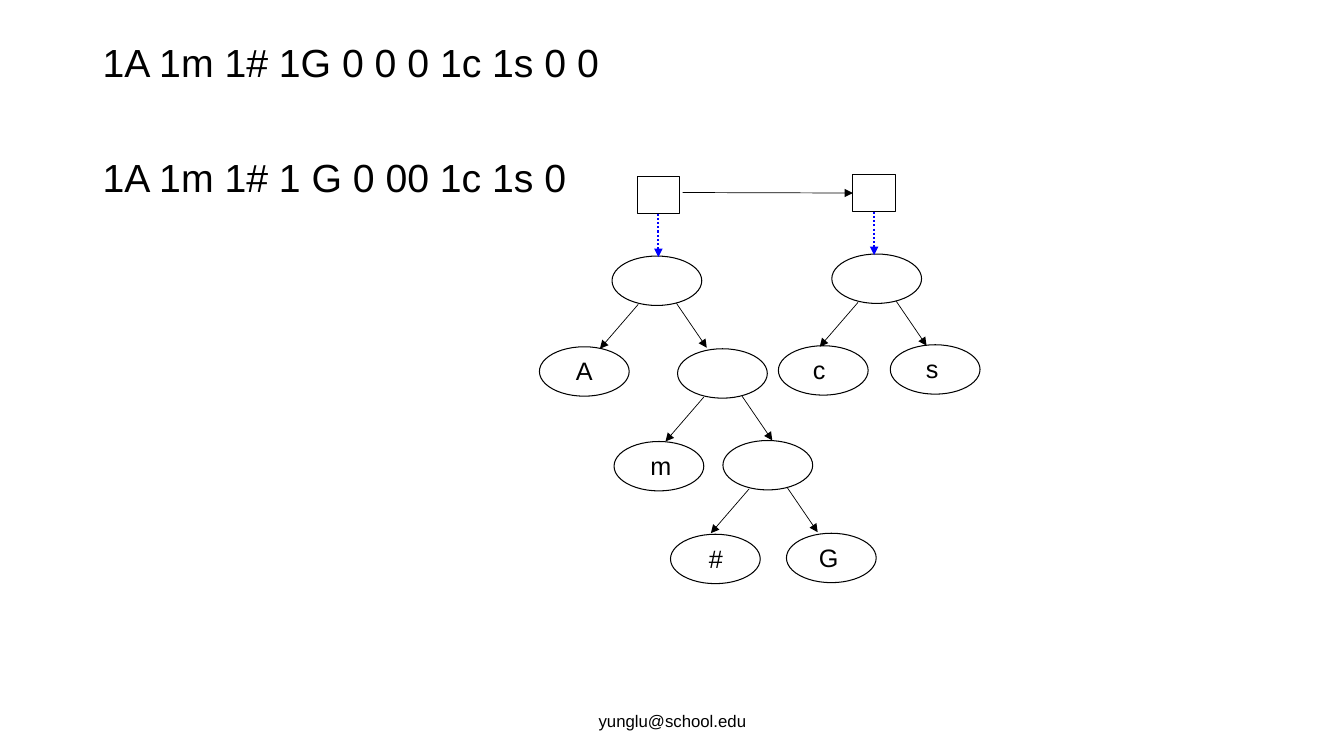
from lxml import etree
from pptx import Presentation
from pptx.dml.color import RGBColor
from pptx.enum.dml import MSO_LINE
from pptx.enum.shapes import MSO_CONNECTOR, MSO_SHAPE
from pptx.enum.text import MSO_ANCHOR, MSO_AUTO_SIZE, PP_ALIGN
from pptx.oxml.ns import qn
from pptx.util import Inches, Pt

STRAIGHT = MSO_CONNECTOR.STRAIGHT
OVAL, RECTANGLE = MSO_SHAPE.OVAL, MSO_SHAPE.RECTANGLE
LEFT, CENTER = PP_ALIGN.LEFT, PP_ALIGN.CENTER
TOP, MIDDLE = MSO_ANCHOR.TOP, MSO_ANCHOR.MIDDLE
FIT_SHAPE = MSO_AUTO_SIZE.SHAPE_TO_FIT_TEXT
DOTTED = MSO_LINE.ROUND_DOT
LEFT_SIDE, BOTTOM_SIDE = 1, 2

COLORS = {"ink": "000000", "pointer": "0000FF"}
FONT = "Arial"
NODE_SIZE = (0.89, 0.49)
BOX_SIZE = (0.42, 0.37)
POINTER_LENGTH = 0.43
LABEL_HEIGHT = 0.4

BRANCHES = [(6.07, 2.54), (6.72, 3.46), (7.17, 4.37), (8.25, 2.52)]
BRANCH_ARROWS = [((0.26, 0.48), (-0.12, 0.92)), ((0.64, 0.47), (0.94, 0.91))]
LEAVES = [
    ("A", 5.35, 3.44, 5.61, 0.37),
    ("m", 6.09, 4.38, 6.35, 0.41),
    ("#", 6.65, 5.3, 6.93, 0.34),
    ("G", 7.8, 5.29, 8.02, 0.4),
    ("c", 7.72, 3.43, 7.96, 0.33),
    ("s", 8.83, 3.42, 9.08, 0.33),
]
LIST_BOXES = [(6.32, 1.75), (8.46, 1.73)]
CODES = [("1A 1m 1# 1G 0 0 0 1c 1s 0 0", 10), ("1A 1m 1# 1 G 0 00 1c 1s 0", 52)]


def color(name):
    return RGBColor.from_string(COLORS[name])


def add_run(paragraph, text, size):
    run = paragraph.add_run()
    run.text = text
    run.font.name = FONT
    run.font.size = Pt(size)
    run.font.color.rgb = color("ink")


def add_text_box(slide, left, top, width, height, wrap=True, anchor=TOP):
    box = slide.shapes.add_textbox(Inches(left), Inches(top), Inches(width), Inches(height))
    box.text_frame.word_wrap = wrap
    box.text_frame.vertical_anchor = anchor
    return box.text_frame


def add_codes(slide):
    frame = add_text_box(slide, 0.92, 0.38, 11.5, 6.37)
    for index, (code, space_before) in enumerate(CODES):
        paragraph = frame.add_paragraph() if index else frame.paragraphs[0]
        paragraph.alignment = LEFT
        paragraph.line_spacing = 0.9
        paragraph.space_before = Pt(space_before)
        add_run(paragraph, code, 28)


def add_centered_text(frame, text, size):
    paragraph = frame.paragraphs[0]
    paragraph.alignment = CENTER
    add_run(paragraph, text, size)


def add_outline(slide, kind, left, top, size):
    width, height = size
    shape = slide.shapes.add_shape(kind, Inches(left), Inches(top), Inches(width), Inches(height))
    shape.shadow.inherit = False
    shape.fill.background()
    shape.line.color.rgb = color("ink")
    shape.line.width = Pt(0.75)
    return shape


def add_arrow(slide, start, end, color_name="ink", width=0.5, dash=None):
    points = [Inches(value) for value in (*start, *end)]
    arrow = slide.shapes.add_connector(STRAIGHT, *points)
    arrow.line.color.rgb = color(color_name)
    arrow.line.width = Pt(width)
    if dash is not None:
        arrow.line.dash_style = dash
    line = arrow.line._get_or_add_ln()
    etree.SubElement(line, qn("a:tailEnd"), type="triangle")
    etree.SubElement(arrow._element.spPr, qn("a:effectLst"))
    return arrow


def add_leaf(slide, letter, left, top, label_left, label_width):
    add_outline(slide, OVAL, left, top, NODE_SIZE)
    frame = add_text_box(slide, label_left, top + 0.04, label_width, LABEL_HEIGHT, wrap=False)
    frame.auto_size = FIT_SHAPE
    add_centered_text(frame, letter, 18)


def add_branch(slide, left, top):
    add_outline(slide, OVAL, left, top, NODE_SIZE)
    for start, end in BRANCH_ARROWS:
        add_arrow(
            slide,
            (left + start[0], top + start[1]),
            (left + end[0], top + end[1]),
        )


def add_list_box(slide, left, top):
    box = add_outline(slide, RECTANGLE, left, top, BOX_SIZE)
    center, bottom = left + BOX_SIZE[0] / 2, top + BOX_SIZE[1]
    pointer = add_arrow(
        slide, (center, bottom), (center, bottom + POINTER_LENGTH), "pointer", 1.5, DOTTED
    )
    pointer.begin_connect(box, BOTTOM_SIDE)
    return box


def main():
    presentation = Presentation()
    presentation.slide_width = Inches(13.33)
    presentation.slide_height = Inches(7.5)
    slide = presentation.slides.add_slide(presentation.slide_layouts[6])

    add_codes(slide)
    footer = add_text_box(slide, 4.42, 6.95, 4.5, 0.4, anchor=MIDDLE)
    add_centered_text(footer, "yunglu@school.edu", 12)

    for leaf in LEAVES:
        add_leaf(slide, *leaf)
    for branch in BRANCHES:
        add_branch(slide, *branch)

    boxes = [add_list_box(slide, *position) for position in LIST_BOXES]
    next_arrow = add_arrow(slide, (6.77, 1.91), (8.46, 1.91))
    next_arrow.end_connect(boxes[1], LEFT_SIDE)

    presentation.save("out.pptx")


if __name__ == "__main__":
    main()
